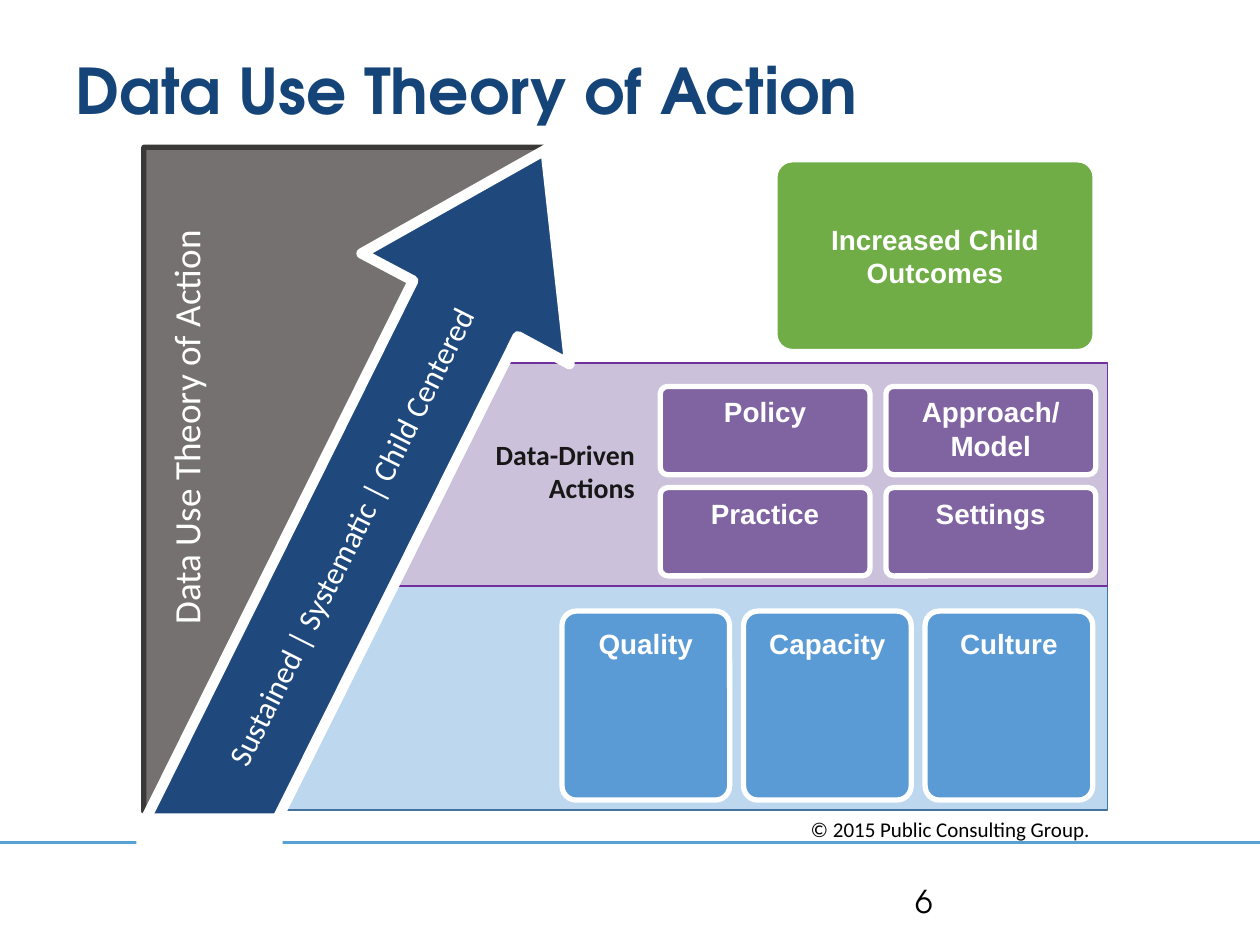
from dataclasses import dataclass

from lxml import etree
from pptx import Presentation
from pptx import util as u
from pptx.dml.color import RGBColor
from pptx.enum import shapes, text
from pptx.oxml.ns import qn

ALIGN = text.PP_ALIGN
MIDDLE = text.MSO_ANCHOR.MIDDLE
RECT = shapes.MSO_SHAPE.RECTANGLE
ROUNDED = shapes.MSO_SHAPE.ROUNDED_RECTANGLE


@dataclass(frozen=True)
class Theme:
    white: str = "FFFFFF"
    black: str = "000000"
    ink: str = "181717"
    title: str = "154578"
    rule: str = "56A0D3"
    base: str = "BDD7EE"
    base_edge: str = "43739E"
    base_card: str = "5B9BD5"
    action: str = "CCC1DA"
    action_edge: str = "7030A0"
    action_card: str = "8064A2"
    outcome: str = "70AD47"
    wedge: str = "767171"
    wedge_edge: str = "3B3838"
    arrow: str = "1F497D"
    display: str = "TeX Gyre Adventor"
    body: str = "Calibri"
    label: str = "Arial"
    title_size: float = 36
    side_size: float = 21.2
    large_size: float = 18
    label_size: float = 15.9
    small_size: float = 12


def write(shape, words, *, font, size, color, bold=False, align=ALIGN.LEFT,
          anchor=text.MSO_ANCHOR.TOP, top_inset=0.13):
    """Put words into a shape, one paragraph for each line."""
    frame = shape.text_frame
    frame.word_wrap = True
    frame.vertical_anchor = anchor
    frame.margin_top = u.Cm(top_inset)
    frame.text = words
    for para in frame.paragraphs:
        para.alignment = align
        for span in para.runs:
            span.font.name = font
            span.font.size = u.Pt(size)
            span.font.bold = bold
            span.font.color.rgb = RGBColor.from_string(color)


class Painter:
    def __init__(self, page, theme):
        self.page = page
        self.theme = theme

    def paint(self, shape, fill, edge, weight):
        shape.shadow.inherit = False
        shape.fill.solid()
        shape.fill.fore_color.rgb = RGBColor.from_string(fill)
        if edge:
            shape.line.color.rgb = RGBColor.from_string(edge)
            shape.line.width = u.Pt(weight)
        else:
            shape.line.fill.background()

    def rule(self, left, right, y):
        line = self.page.shapes.add_connector(
            shapes.MSO_CONNECTOR.STRAIGHT, u.Cm(left), u.Cm(y), u.Cm(right), u.Cm(y))
        line.line.color.rgb = RGBColor.from_string(self.theme.rule)
        line.line.width = u.Pt(1.5)
        etree.SubElement(line._element.spPr, qn("a:effectLst"))

    def block(self, area, fill, edge=None, weight=1, kind=RECT):
        box = self.page.shapes.add_shape(kind, *map(u.Cm, area))
        self.paint(box, fill, edge, weight)
        return box

    def card(self, area, words, fill, weight=3, **layout):
        box = self.block(area, fill, self.theme.white, weight, ROUNDED)
        box.adjustments[0] = 0.085
        write(box, words, font=self.theme.label, size=self.theme.label_size,
              color=self.theme.white, bold=True, align=ALIGN.CENTER, **layout)

    def outline(self, points, fill, edge, weight):
        corners = [(u.Cm(x), u.Cm(y)) for x, y in points]
        builder = self.page.shapes.build_freeform(*corners[0])
        builder.add_line_segments(corners[1:], close=True)
        self.paint(builder.convert_to_shape(), fill, edge, weight)

    def caption(self, area, words, turn=0, **style):
        box = self.page.shapes.add_textbox(*map(u.Cm, area))
        box.rotation = turn
        write(box, words, **style)


def draw(page):
    t = Theme()
    p = Painter(page, t)
    p.rule(0, 25.4, 16.99)
    p.caption((23.65 - 5.44, 17.65, 5.92, 1.02), "6", font=t.display,
              size=t.large_size, color=t.black, anchor=MIDDLE)
    p.caption((1.27, 0.2, 22.86, 3.18), "Data Use Theory of Action", font=t.display,
              size=t.title_size, color=t.title, bold=True, anchor=MIDDLE)

    band_left, band_width = 2.9, 19.43
    p.block((band_left, 11.76, band_width, 4.57), t.base, t.base_edge)
    for column, words in enumerate(("Quality", "Capacity", "Culture")):
        p.card((11.33 + 3.66 * column, 12.32, 3.38, 3.81), words, t.base_card,
               top_inset=0.23)

    p.block((band_left, 7.32, band_width, 4.5), t.action, t.action_edge)
    actions = (("Policy", "Approach/\nModel"), ("Practice", "Settings"))
    for row, names in enumerate(actions):
        for column, words in enumerate(names):
            p.card((13.31 + 4.55 * column, 7.79 + 2.04 * row, 4.23, 1.78),
                   words, t.action_card)
    p.caption((9.09, 8.69, 3.96, 1.63), "Data-Driven\nActions", font=t.body,
              size=t.label_size, color=t.ink, bold=True, align=ALIGN.RIGHT)

    p.card((15.65, 3.25, 6.4, 3.81), "Increased Child Outcomes", t.outcome,
           weight=1.5, anchor=MIDDLE)

    wedge = [(10.95, 2.97), (2.9, 2.97), (2.9, 16.36), (4.75, 16.36)]
    p.outline(wedge, t.wedge, t.wedge_edge, 3)
    p.caption((-0.61, 7.9, 8.71, 1.17), "Data Use Theory of Action", turn=270,
              font=t.body, size=t.side_size, color=t.white)

    arrow = [(2.9, 16.59), (8.33, 5.66), (7.29, 5.11), (11, 3.02),
             (11.48, 7.34), (10.44, 6.78), (5, 17.7)]
    p.outline(arrow, t.arrow, t.white, 6)
    # Trims the foot of the arrow level with the bands
    p.block((2.75, 16.4, 2.95, 1.52), t.white)
    p.caption((1.52, 10.03, 11.33, 1.02), "Sustained | Systematic | Child Centered",
              turn=296.6, font=t.body, size=t.large_size, color=t.white)
    p.caption((13.51, 16.33, 8.71, 0.76), "© 2015 Public Consulting Group.",
              font=t.body, size=t.small_size, color=t.black, align=ALIGN.RIGHT)


def main():
    deck = Presentation()
    deck.slide_width, deck.slide_height = u.Cm(25.4), u.Cm(19.05)
    draw(deck.slides.add_slide(deck.slide_layouts[6]))
    deck.save("out.pptx")


if __name__ == "__main__":
    main()
